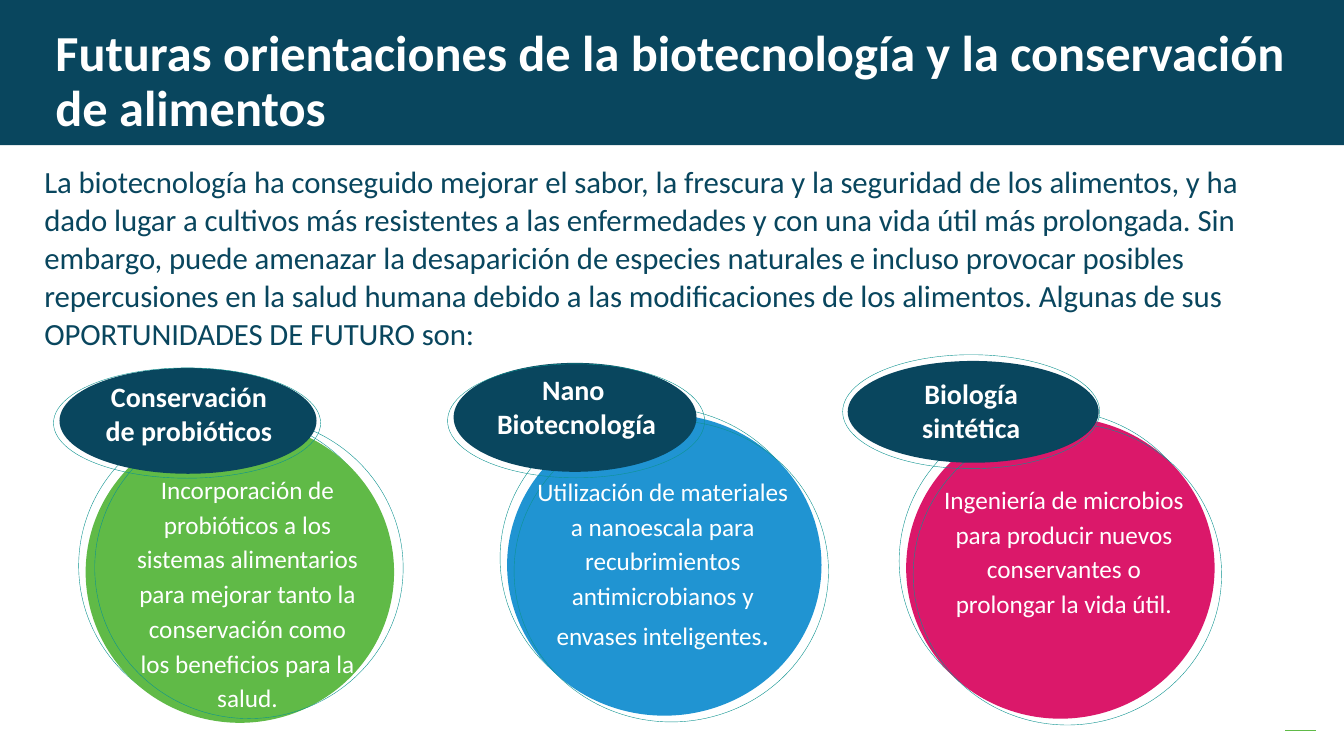
from dataclasses import dataclass

from lxml.etree import SubElement
from pptx import Presentation
from pptx.dml.color import RGBColor
from pptx.enum.shapes import MSO_CONNECTOR as Link, MSO_SHAPE as Kind
from pptx.enum.text import MSO_ANCHOR as Anchor, MSO_AUTO_SIZE as Fit, PP_ALIGN as Align
from pptx.oxml.ns import qn
from pptx.util import Pt

NAVY = RGBColor(0x09, 0x46, 0x5E)
TEAL = RGBColor(0x0D, 0x93, 0x90)
GREEN = RGBColor(0x60, 0xBA, 0x47)
BLUE = RGBColor(0x20, 0x94, 0xD2)
PINK = RGBColor(0xDB, 0x18, 0x6A)
WHITE = RGBColor(0xFF, 0xFF, 0xFF)
FACE = "Calibri"
TALL = 215.3  # height of every disc

Box = tuple[float, float, float, float]
Run = tuple[str, float]


@dataclass
class Topic:
    color: RGBColor
    disc: tuple[float, float, float]  # left, top, width
    rings: list[tuple[float, float]]  # back and front shift from the disc
    cap: Box
    rim: Box
    name: list[str]
    name_at: Box
    note: list[Run]
    note_at: Box


TOPICS = [
    Topic(GREEN, (61.2, 301, 220.3), [(-5, -4.5), (6.5, -3)],
          (42.5, 262.8, 183.6, 75.6), (38.2, 262.8, 190.8, 78.8),
          ["Conservación de probióticos"], (61.9, 267.8, 146.2, 55.4),
          [("Incorporación de probióticos a los sistemas alimentarios para mejorar "
            "tanto la conservación como los beneficios para la salud.", 18)],
          (90, 331.9, 173.5, 181.4)),
    Topic(BLUE, (362.2, 295.9, 224.6), [(-5, -5), (5, 4.5)],
          (324, 259.2, 173.5, 77.8), (319.7, 259.9, 183.6, 81.4),
          ["Nano ", "Biotecnología"], (330.5, 262.8, 162.7, 55.4),
          [("Utilización de materiales a nanoescala para recubrimientos "
            "antimicrobianos y envases inteligentes", 18), (".", 21)],
          (376.6, 333.4, 193.7, 135.4)),
    Topic(PINK, (647.3, 298.1, 220.3), [(-5, -5), (5, 4.5)],
          (605.5, 257.8, 179.3, 72.7), (601.9, 253.4, 183.6, 81.4),
          ["Biología sintética"], (618.5, 265.7, 150.5, 79.9),
          [("Ingeniería de microbios para producir nuevos conservantes "
            "o prolongar la vida útil.", 18)],
          (662.4, 339.1, 195.1, 133.2)),
]


def place(shape, box: Box) -> None:
    shape.left, shape.top, shape.width, shape.height = map(Pt, box)


def solid(slide, kind, box: Box, color: RGBColor):
    shape = slide.shapes.add_shape(kind, *map(Pt, box))
    shape.shadow.inherit = False
    shape.fill.solid()
    shape.fill.fore_color.rgb = color
    shape.line.fill.background()
    return shape


def ring(slide, box: Box) -> None:
    shape = slide.shapes.add_shape(Kind.OVAL, *map(Pt, box))
    shape.shadow.inherit = False
    shape.fill.background()
    shape.line.color.rgb = TEAL
    shape.line.width = Pt(0.28)


def add_run(para, text: str, size: float, color: RGBColor, bold: bool = False):
    run = para.add_run()
    run.text = text
    font = run.font
    font.name, font.size, font.bold = FACE, Pt(size), bold
    font.color.rgb = color
    return run


def label(slide, box: Box, paras: list[list[Run]], bold: bool, pitch: float) -> None:
    frame = slide.shapes.add_textbox(*map(Pt, box)).text_frame
    frame.word_wrap = True
    for i, runs in enumerate(paras):
        para = frame.add_paragraph() if i else frame.paragraphs[0]
        para.alignment, para.line_spacing = Align.CENTER, pitch
        for text, size in runs:
            add_run(para, text, size, WHITE, bold)


def fill_holder(holder, box: Box, pitch: float):
    place(holder, box)
    frame = holder.text_frame
    frame.word_wrap, frame.auto_size = True, Fit.NONE
    frame.vertical_anchor = Anchor.TOP
    para = frame.paragraphs[0]
    para.alignment, para.line_spacing, para.space_before = Align.LEFT, pitch, Pt(0)
    return para


def draw_topic(slide, topic: Topic) -> None:
    left, top, wide = topic.disc
    back, front = [(left + dx, top + dy, wide, TALL) for dx, dy in topic.rings]
    ring(slide, back)
    solid(slide, Kind.OVAL, (left, top, wide, TALL), topic.color)
    ring(slide, front)
    solid(slide, Kind.OVAL, topic.cap, NAVY)
    ring(slide, topic.rim)
    label(slide, topic.name_at, [[(line, 20)] for line in topic.name], True, 1.0)
    label(slide, topic.note_at, [topic.note], False, 1.15)


def main() -> None:
    deck = Presentation()
    deck.slide_width, deck.slide_height = Pt(960), Pt(540)
    slide = deck.slides.add_slide(deck.slide_layouts[1])
    title, body = slide.placeholders

    # Header band behind the title, and the corner mark
    band = solid(slide, Kind.RECTANGLE, (0, 0, 960, 103.7), NAVY)
    title.element.addprevious(band.element)
    mark = slide.shapes.add_connector(Link.STRAIGHT, Pt(918), Pt(522), Pt(940.3), Pt(522))
    mark.line.color.rgb = GREEN
    mark.line.width = Pt(1)
    SubElement(mark.element.spPr, qn("a:effectLst"))

    # Title
    para = fill_holder(title, (32.4, 16.6, 921.6, 63.4), 0.9)
    add_run(para, "Futuras orientaciones de la biotecnología y la conservación de alimentos",
            36, WHITE, True)

    # Introduction
    para = fill_holder(body, (24.5, 111.6, 942.5, 131), 1.03)
    body.text_frame.margin_right = Pt(58)
    props = para._p.get_or_add_pPr()
    props.set("marL", "0")
    props.set("indent", "0")
    SubElement(props, qn("a:buNone"))
    run = add_run(
        para,
        "La biotecnología ha conseguido mejorar el sabor, la frescura y la seguridad de "
        "los alimentos, y ha dado lugar a cultivos más resistentes a las enfermedades y "
        "con una vida útil más prolongada. Sin embargo, puede amenazar la desaparición de "
        "especies naturales e incluso provocar posibles repercusiones en la salud humana "
        "debido a las modificaciones de los alimentos. Algunas de sus OPORTUNIDADES DE "
        "FUTURO son:", 22, NAVY)
    run.font._element.set("spc", "-5")

    # Three opportunities
    for topic in TOPICS:
        draw_topic(slide, topic)

    deck.save("out.pptx")


if __name__ == "__main__":
    main()
